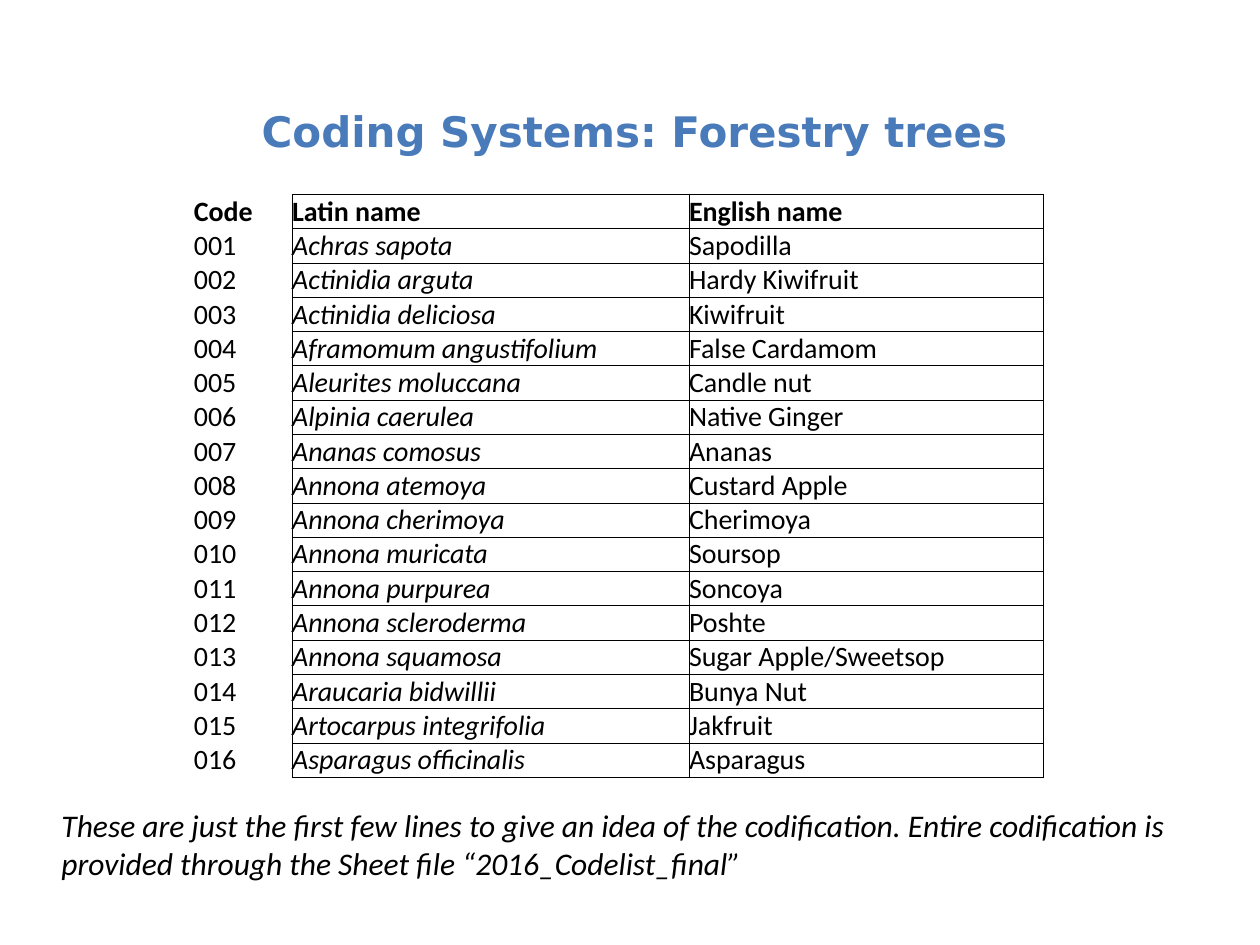
from lxml import etree
from pptx import Presentation
from pptx.dml.color import RGBColor
from pptx.enum.text import MSO_ANCHOR, MSO_AUTO_SIZE, PP_ALIGN
from pptx.oxml.ns import qn
from pptx.util import Cm, Pt

TOP, MIDDLE, BOTTOM = MSO_ANCHOR.TOP, MSO_ANCHOR.MIDDLE, MSO_ANCHOR.BOTTOM
LEFT, CENTER = PP_ALIGN.LEFT, PP_ALIGN.CENTER
NO_AUTOFIT, FIT_SHAPE = MSO_AUTO_SIZE.NONE, MSO_AUTO_SIZE.SHAPE_TO_FIT_TEXT

BLACK = "000000"
BLUE = "497ABA"
BORDER_WIDTH = 0.5
ROW_HEIGHT = 0.69
COLUMN_WIDTHS = [1.98, 8.0, 7.14]
HEADERS = ["Code", "Latin name", "English name"]
TREES = [
    ("Achras sapota", "Sapodilla"),
    ("Actinidia arguta", "Hardy Kiwifruit"),
    ("Actinidia deliciosa", "Kiwifruit"),
    ("Aframomum angustifolium", "False Cardamom"),
    ("Aleurites moluccana", "Candle nut"),
    ("Alpinia caerulea", "Native Ginger"),
    ("Ananas comosus", "Ananas"),
    ("Annona atemoya", "Custard Apple"),
    ("Annona cherimoya", "Cherimoya"),
    ("Annona muricata", "Soursop"),
    ("Annona purpurea", "Soncoya"),
    ("Annona scleroderma", "Poshte"),
    ("Annona squamosa", "Sugar Apple/Sweetsop"),
    ("Araucaria bidwillii", "Bunya Nut"),
    ("Artocarpus integrifolia", "Jakfruit"),
    ("Asparagus officinalis", "Asparagus"),
]
NOTE = ("These are just the first few lines to give an idea of the codification. "
        "Entire codification is provided through the Sheet file “2016_Codelist_final”")


def rgb(color):
    return RGBColor.from_string(color)


def write(tf, text, size=16, font="Calibri", color=BLACK, bold=False,
          italic=False, align=LEFT):
    p = tf.paragraphs[0]
    p.alignment = align
    r = p.add_run()
    r.text = text
    r.font.size = Pt(size)
    r.font.name = font
    r.font.bold = bold
    r.font.italic = italic
    r.font.color.rgb = rgb(color)


def set_border(cell, side, visible):
    ln = etree.SubElement(cell._tc.get_or_add_tcPr(), qn(f"a:ln{side}"))
    ln.set("w", str(Pt(BORDER_WIDTH)))
    if visible:
        fill = etree.SubElement(ln, qn("a:solidFill"))
        etree.SubElement(fill, qn("a:srgbClr")).set("val", BLACK)
    else:
        etree.SubElement(ln, qn("a:noFill"))


def add_title(s, text):
    title = s.shapes.title
    title.left, title.top, title.width, title.height = Cm(0.89), Cm(1.93), Cm(23.8), Cm(2.39)
    tf = title.text_frame
    tf.auto_size = NO_AUTOFIT
    tf.vertical_anchor = TOP
    tf.margin_top = Cm(0.2)
    write(tf, text, size=24, font="DejaVu Sans", color=BLUE, bold=True, align=CENTER)


def add_code_table(s):
    rows = [HEADERS] + [(f"{n:03}", *tree) for n, tree in enumerate(TREES, 1)]
    frame = s.shapes.add_table(len(rows), len(HEADERS), Cm(3.91), Cm(3.92),
                               Cm(sum(COLUMN_WIDTHS)), Cm(ROW_HEIGHT * len(rows)))
    table = frame.table
    table.first_row = table.horz_banding = False
    for column, width in zip(table.columns, COLUMN_WIDTHS):
        column.width = Cm(width)
    for i, row in enumerate(rows):
        table.rows[i].height = Cm(ROW_HEIGHT)
        for j, text in enumerate(row):
            cell = table.cell(i, j)
            cell.margin_left = cell.margin_right = cell.margin_top = cell.margin_bottom = 0
            cell.vertical_anchor = MIDDLE if (i, j) == (0, 1) else BOTTOM
            for side in "LRTB":
                set_border(cell, side, j > 0 or side == "R")
            cell.fill.background()
            write(cell.text_frame, text, bold=i == 0, italic=i > 0 and j == 1)


def add_note(s, text):
    tf = s.shapes.add_textbox(Cm(0.99), Cm(16.13), Cm(24.5), Cm(1.8)).text_frame
    tf.word_wrap = True
    tf.auto_size = FIT_SHAPE
    write(tf, text, size=18, italic=True)


def main():
    prs = Presentation()
    prs.slide_width, prs.slide_height = Cm(25.4), Cm(19.05)
    s = prs.slides.add_slide(prs.slide_layouts[5])
    add_title(s, "Coding Systems: Forestry trees")
    add_code_table(s)
    add_note(s, NOTE)
    prs.save("out.pptx")


if __name__ == "__main__":
    main()
